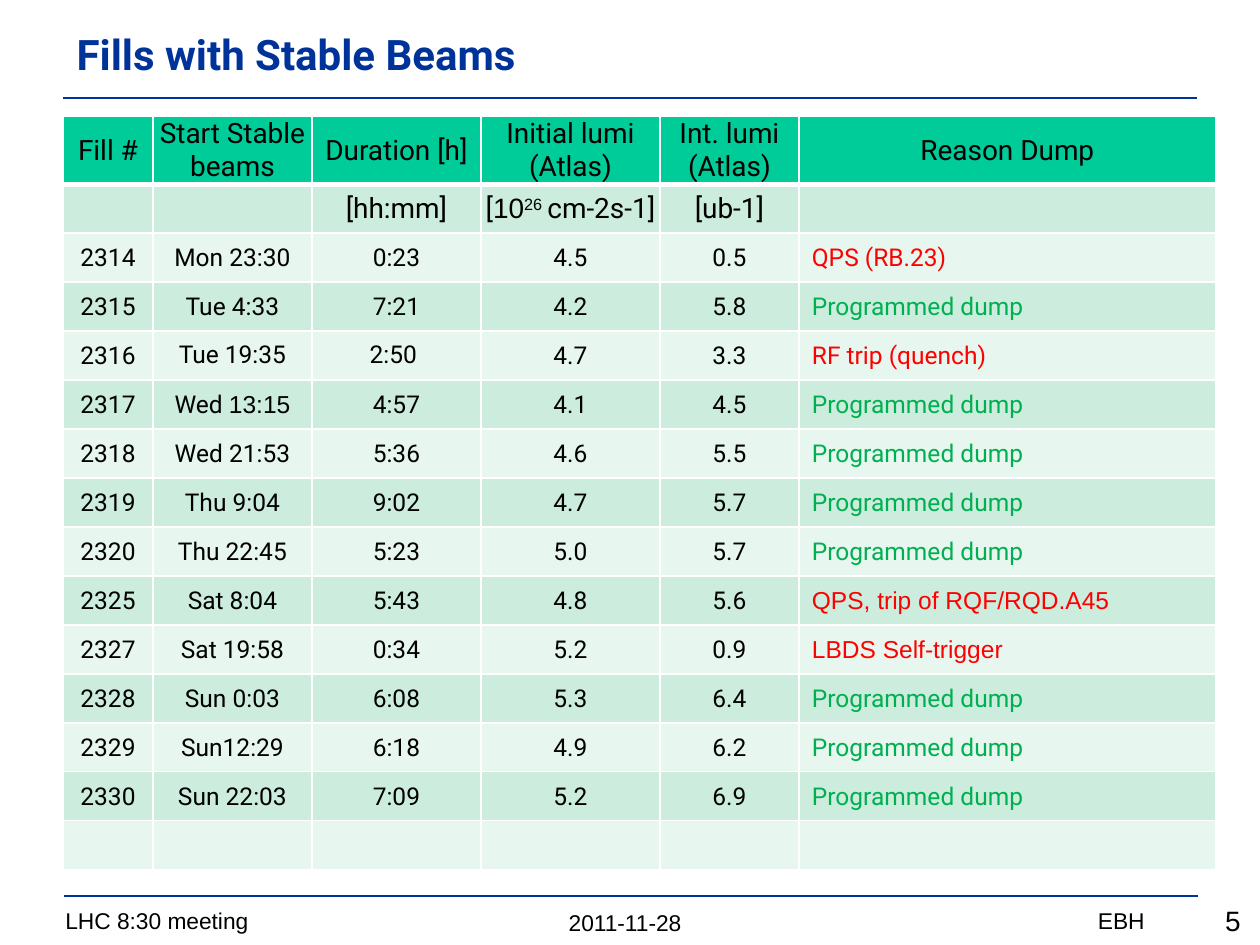
from lxml.etree import SubElement
from pptx import Presentation
from pptx.dml.color import RGBColor
from pptx.enum.shapes import MSO_CONNECTOR
from pptx.enum.text import MSO_ANCHOR, MSO_AUTO_SIZE, PP_ALIGN
from pptx.oxml import parse_xml
from pptx.oxml.ns import nsdecls, qn
from pptx.util import Emu, Pt

NAVY = RGBColor(0x00, 0x33, 0x99)
BLACK = RGBColor(0x00, 0x00, 0x00)
WHITE = RGBColor(0xFF, 0xFF, 0xFF)
TEAL = RGBColor(0x00, 0xCC, 0x99)
MINT = RGBColor(0xCC, 0xEC, 0xDE)
PALE = RGBColor(0xE7, 0xF6, 0xEF)
RED = RGBColor(0xFF, 0x00, 0x00)
GREEN = RGBColor(0x00, 0xB0, 0x50)

SCALE = 9144000 / 1260
LEFT, MID, RIGHT = PP_ALIGN.LEFT, PP_ALIGN.CENTER, PP_ALIGN.RIGHT
HEAD = {"name": "Roboto", "size": Pt(16), "bold": False}
DATA = {"name": "Roboto", "size": Pt(14), "bold": False}
FOOT = {"name": "Arial", "size": Pt(13)}
ARIAL = {"name": "Arial"}
TIGHT = {"margin_left": 1, "margin_top": 1, "margin_right": 1, "margin_bottom": 0}

COLS = [90, 159, 169, 179, 139, 417]
TITLES = ["Fill #", "Start Stable beams", "Duration [h]",
          "Initial lumi (Atlas)", "Int. lumi (Atlas)", "Reason Dump"]
LUMI = [("[", {}), ("10", ARIAL), ("26", ARIAL | {"base": 30000}),
        (" ", ARIAL | {"size": Pt(11)}), ("cm-2s-1]", {})]
UNITS = ["", "", "[hh:mm]", LUMI, "[ub-1]", ""]
DUMP = "Programmed dump"
FILLS = [
    ["2314", "Mon 23:30", "0:23", "4.5", "0.5", "QPS (RB.23)"],
    ["2315", "Tue 4:33", "7:21", "4.2", "5.8", DUMP],
    ["2316", "Tue 19:35", "2:50 ", "4.7", "3.3", "RF trip (quench)"],
    ["2317", [("Wed ", {}), ("13:15", ARIAL)], "4:57", "4.1", "4.5", DUMP],
    ["2318", "Wed 21:53", "5:36", "4.6", "5.5", DUMP],
    ["2319", "Thu 9:04", "9:02", "4.7", "5.7", DUMP],
    ["2320", "Thu 22:45", "5:23", "5.0", "5.7", DUMP],
    ["2325", "Sat 8:04", "5:43", "4.8", "5.6", [("QPS, trip of RQF/RQD.A45", ARIAL)]],
    ["2327", "Sat 19:58", "0:34", "5.2", "0.9", [("LBDS Self-trigger", ARIAL)]],
    ["2328", "Sun 0:03", "6:08", "5.3", "6.4", DUMP],
    ["2329", "Sun12:29", "6:18", "4.9", "6.2", DUMP],
    ["2330", "Sun 22:03", "7:09", "5.2", "6.9", DUMP],
]
ROWS = [TITLES, UNITS, *FILLS, [""] * len(COLS)]
LOOSE = {(4, 1), (4, 2)}  # cells that keep the default margins


def px(n):
    return Emu(round(n * SCALE))


def write(frame, text, form, color, align=LEFT):
    """Fill a text frame from a string or a list of (text, format) runs."""
    para = frame.paragraphs[0]
    para.alignment = align
    runs = text if isinstance(text, list) else [(text, {})]
    for words, extra in runs:
        run = para.add_run()
        run.text = words
        run.font.color.rgb = color
        for key, value in (form | extra).items():
            if key == "base":
                run.font._element.set("baseline", str(value))
            else:
                setattr(run.font, key, value)
    return para


def edge(cell, low):
    """Draw white cell borders, the lower one with the given width."""
    props = cell._tc.get_or_add_tcPr()
    for i, (side, width) in enumerate(zip("LRTB", (1, 1, 1, low))):
        props.insert(i, parse_xml(
            f'<a:ln{side} {nsdecls("a")} w="{Pt(width)}"><a:solidFill>'
            f'<a:srgbClr val="{WHITE}"/></a:solidFill></a:ln{side}>'))


def rule(slide, x, y, w):
    line = slide.shapes.add_connector(
        MSO_CONNECTOR.STRAIGHT, px(x), px(y), px(x + w), px(y))
    line.line.color.rgb = NAVY
    line.line.width = Pt(1.5)
    SubElement(line._element.spPr, qn("a:effectLst"))


def label(slide, box, text, form, align):
    frame = slide.shapes.add_textbox(*map(px, box)).text_frame
    frame.word_wrap = True
    write(frame, text, form, BLACK, align)


def header(slide, x, y, w, h):
    title = slide.shapes.title
    for key, value in zip(("left", "top", "width", "height"), (x, y, w, h)):
        setattr(title, key, px(value))
    frame = title.text_frame
    frame.auto_size = MSO_AUTO_SIZE.NONE
    frame.vertical_anchor = MSO_ANCHOR.MIDDLE
    form = {"name": "Roboto", "size": Pt(24), "bold": True}
    write(frame, "Fills with Stable Beams", form, NAVY)
    rule(slide, x - 1, y + h + 1, w + 1)


def footer(slide, x, y, w):
    rule(slide, x, y, w)
    label(slide, (x - 11, y + 5, 466, 40), "LHC 8:30 meeting", FOOT, LEFT)
    label(slide, (x + 241, y + 7, 640, 40), "2011-11-28", FOOT, MID)
    label(slide, (x + 725, y + 5, 368, 40), "EBH", FOOT, RIGHT)
    label(slide, (x + 1044, y + 1, 145, 47), "5", FOOT | {"size": Pt(16)}, RIGHT)


def grid(slide, x, y, w, h):
    shape = slide.shapes.add_table(
        len(ROWS), len(COLS), px(x), px(y), px(w), px(h))
    table = shape.table
    for col, width in zip(table.columns, COLS):
        col.width = px(width)
    for r, row in enumerate(ROWS):
        table.rows[r].height = px(49 if r else 9)
        for c, text in enumerate(row):
            cell = table.cell(r, c)
            cell.fill.solid()
            cell.fill.fore_color.rgb = (MINT if r % 2 else PALE) if r else TEAL
            edge(cell, 1 if r else 3)
            cell.vertical_anchor = MSO_ANCHOR.MIDDLE
            if (r, c) not in LOOSE:
                for key, value in TIGHT.items():
                    setattr(cell, key, px(value))
            if not text:
                continue
            form = DATA if r > 1 else HEAD
            if r > 1 and c == len(COLS) - 1:
                color = GREEN if text == DUMP else RED
                para = write(cell.text_frame, text, form, color)
                para._p.get_or_add_pPr().set("indent", str(px(12)))
            else:
                write(cell.text_frame, text, form, BLACK, MID)
    shape.height = px(h)


def main():
    deck = Presentation()
    deck.slide_width, deck.slide_height = px(1260), px(945)
    slide = deck.slides.add_slide(deck.slide_layouts[5])
    footer(slide, 64, 896, 1134)
    header(slide, 64, 11, 1133, 86)
    grid(slide, 63, 116, sum(COLS), 764)
    deck.save("out.pptx")


if __name__ == "__main__":
    main()
